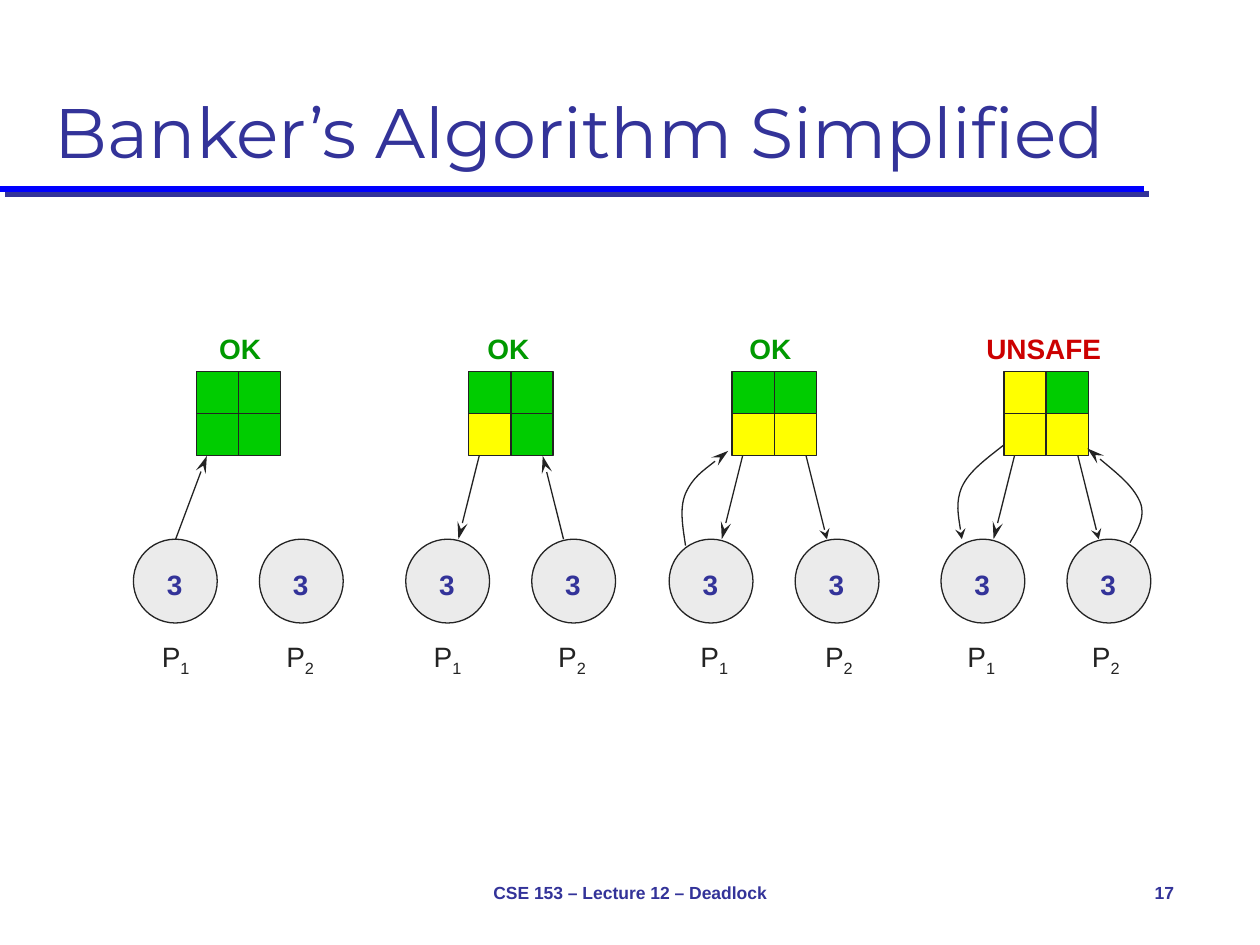
from lxml import etree
from pptx import Presentation
from pptx.dml.color import RGBColor
from pptx.enum.shapes import MSO_CONNECTOR, MSO_SHAPE
from pptx.enum.text import MSO_ANCHOR, MSO_AUTO_SIZE, PP_ALIGN
from pptx.oxml.ns import qn
from pptx.util import Cm, Pt

RECTANGLE, ELLIPSE = MSO_SHAPE.RECTANGLE, MSO_SHAPE.OVAL
STRAIGHT = MSO_CONNECTOR.STRAIGHT
LEFT, CENTER, RIGHT = PP_ALIGN.LEFT, PP_ALIGN.CENTER, PP_ALIGN.RIGHT
MIDDLE, BOTTOM = MSO_ANCHOR.MIDDLE, MSO_ANCHOR.BOTTOM
NO_FIT, GROW = MSO_AUTO_SIZE.NONE, MSO_AUTO_SIZE.SHAPE_TO_FIT_TEXT

COLORS = {
    "title": "333399", "rule": "0000FF", "ink": "232323", "process": "EBEBEB",
    "free": "00CC00", "used": "FFFF00", "OK": "009900", "UNSAFE": "CC0000",
}
CELL, CIRCLE, PROCESS_GAP = 0.85, 1.69, 2.54
GRID_LEFT, GRID_TOP, CIRCLE_TOP = 1.27, 0.94, 4.32
PANEL_TOP, LABEL_HEIGHT = 6.55, 0.94

REQUEST_1 = [(0.85, 4.32), (1.48, 2.64)]
GRANT_1 = [(1.48, 2.64), (1.06, 4.32)]
REQUEST_2 = [(3.18, 4.32), (2.76, 2.64)]
GRANT_2 = REQUEST_2[::-1]
CURVED_REQUEST_1 = [(0.33, 4.45), (0.28, 4.09), (0.2, 3.71), (0.33, 3.4),
                    (0.48, 3.07), (0.84, 2.82), (1.19, 2.54)]
CURVED_GRANT_1 = [(x + 0.09, y - 0.13) for x, y in reversed(CURVED_REQUEST_1)]
CURVED_REQUEST_2 = [(3.81, 4.39), (3.96, 4.14), (4.14, 3.86), (4.01, 3.56),
                    (3.86, 3.23), (3.4, 2.87), (2.95, 2.49)]

PANELS = [
    dict(left=2.69, verdict="OK", verdict_x=2.15, label_x=0.85,
         cells=["free", "free", "free", "free"], arrows=[(REQUEST_1, "lg")]),
    dict(left=8.18, verdict="OK", verdict_x=2.07, label_x=0.84,
         cells=["free", "free", "used", "free"],
         arrows=[(GRANT_1, "lg"), (REQUEST_2, "lg")]),
    dict(left=13.49, verdict="OK", verdict_x=2.04, label_x=0.91,
         cells=["free", "free", "used", "used"],
         arrows=[(GRANT_1, "lg"), (GRANT_2, "med"), (CURVED_REQUEST_1, "lg")]),
    dict(left=18.97, verdict="UNSAFE", verdict_x=2.07, label_x=0.81,
         cells=["used", "free", "used", "used"],
         arrows=[(GRANT_1, "lg"), (GRANT_2, "med"),
                 (CURVED_GRANT_1, "med"), (CURVED_REQUEST_2, "lg")]),
]


def color(name):
    return RGBColor.from_string(COLORS[name])


def style_line(line, name="ink", width=0.75):
    line.color.rgb = color(name)
    line.width = Pt(width)


def style_text(para, size, name, bold=False, align=CENTER, face="Arial"):
    para.alignment = align
    para.font.name, para.font.size, para.font.bold = face, Pt(size), bold
    para.font.color.rgb = color(name)


def add_text(page, left, top, width, height, text, size, name,
             bold=True, align=CENTER, fit=GROW):
    box = page.shapes.add_textbox(Cm(left), Cm(top), Cm(width), Cm(height))
    frame = box.text_frame
    frame.word_wrap, frame.auto_size = False, fit
    frame.vertical_anchor = MIDDLE
    para = frame.paragraphs[0]
    para.add_run().text = text
    style_text(para, size, name, bold, align)
    return para


def add_label(page, center, top, width, text, name, bold=True):
    return add_text(page, center - width / 2, top, width, LABEL_HEIGHT,
                    text, 16, name, bold)


def add_shape(page, kind, left, top, size, fill):
    shape = page.shapes.add_shape(kind, Cm(left), Cm(top), Cm(size), Cm(size))
    shape.shadow.inherit = False
    shape.fill.solid()
    shape.fill.fore_color.rgb = color(fill)
    style_line(shape.line)


def add_line(page, start, end, name="ink", width=0.75):
    line = page.shapes.add_connector(STRAIGHT, *(Cm(v) for v in start + end))
    style_line(line.line, name, width)
    effects = etree.SubElement(line._element.spPr, qn("a:effectLst"))
    return line, effects


def add_curve(page, points):
    points = [(Cm(x), Cm(y)) for x, y in points]
    builder = page.shapes.build_freeform(*points[0])
    builder.add_line_segments(points[1:], close=False)
    curve = builder.convert_to_shape()
    curve.shadow.inherit = False
    curve.fill.background()
    style_line(curve.line)
    outline = curve._element.find(".//" + qn("a:path"))
    segments = outline.findall(qn("a:lnTo"))
    for first in range(0, len(segments), 3):
        bezier = etree.SubElement(outline, qn("a:cubicBezTo"))
        for segment in segments[first:first + 3]:
            bezier.append(segment[0])
            outline.remove(segment)
    return curve


def add_arrow(page, points, length):
    if len(points) == 2:
        arrow, _ = add_line(page, *points)
    else:
        arrow = add_curve(page, points)
    outline = arrow._element.spPr.find(qn("a:ln"))
    etree.SubElement(outline, qn("a:tailEnd"), type="stealth", w="med", len=length)


def add_header(page):
    line, effects = add_line(page, (0, 3.81), (23.06, 3.81), "rule", 3.5)
    shadow = etree.SubElement(effects, qn("a:outerShdw"), dist=str(Pt(4.2)),
                              dir="2700000", algn="ctr", rotWithShape="0")
    etree.SubElement(shadow, qn("a:srgbClr"), val=COLORS["title"])
    title = page.shapes.title
    title.left, title.top = Cm(0.85), Cm(0.42)
    title.width, title.height = Cm(23.71), Cm(3.18)
    title.text_frame.text = "Banker’s Algorithm Simplified"
    title.text_frame.auto_size = NO_FIT
    title.text_frame.vertical_anchor = BOTTOM
    style_text(title.text_frame.paragraphs[0], 40, "title", align=LEFT, face="Montserrat")


def add_footer(page, top, height):
    add_text(page, 8.68, top, 8.04, height, "CSE 153 – Lecture 12 – Deadlock",
             10, "title", fit=NO_FIT)
    add_text(page, 22.23, top, 1.69, height, "17", 10, "title",
             align=RIGHT, fit=NO_FIT)


def add_panel(page, left, top, verdict, verdict_x, label_x, cells, arrows):
    for index, state in enumerate(cells):
        row, column = divmod(index, 2)
        add_shape(page, RECTANGLE, left + GRID_LEFT + column * CELL,
                  top + GRID_TOP + row * CELL, CELL, state)
    for index in range(2):
        circle_left = left + index * PROCESS_GAP
        add_shape(page, ELLIPSE, circle_left, top + CIRCLE_TOP, CIRCLE, "process")
        add_label(page, circle_left + 0.83, top + 4.75, 0.81, "3", "title")
        para = add_label(page, left + label_x + index * 2.51, top + 6.26, 1.1,
                         "P", "ink", bold=False)
        span = para.add_run()
        span.text = str(index + 1)
        span._r.get_or_add_rPr().set("baseline", "-25000")
    add_label(page, left + verdict_x, top, 2.82 if verdict == "UNSAFE" else 1.35,
              verdict, verdict)
    for points, length in arrows:
        add_arrow(page, [(left + x, top + y) for x, y in points], length)


def main():
    deck = Presentation()
    deck.slide_width, deck.slide_height = Cm(25.4), Cm(19.05)
    page = deck.slides.add_slide(deck.slide_layouts[5])
    add_header(page)
    add_footer(page, 17.35, 1.27)
    for panel in PANELS:
        add_panel(page, top=PANEL_TOP, **panel)
    deck.save("out.pptx")


if __name__ == "__main__":
    main()
